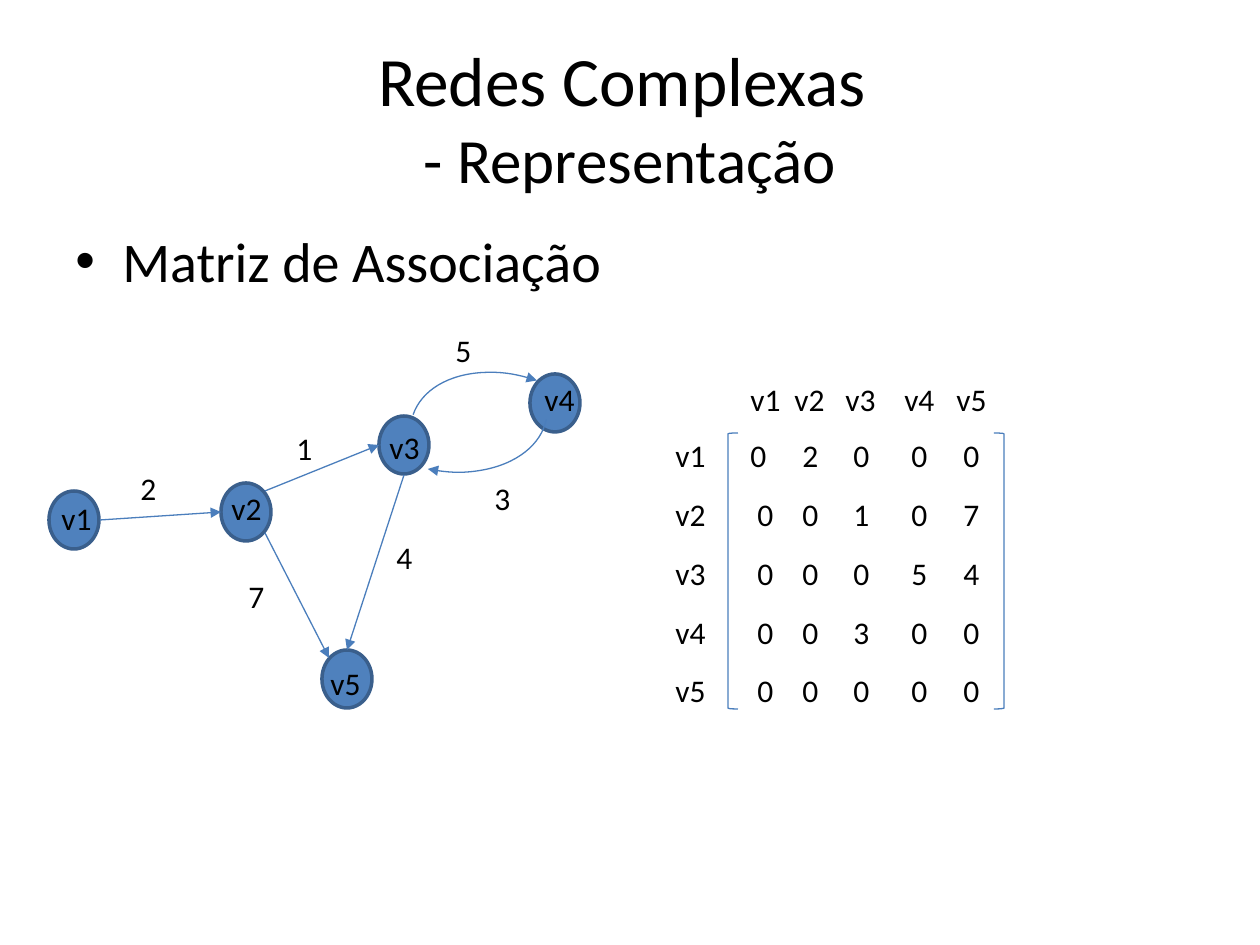
"""Build the slide on the association matrix of a weighted directed graph."""
import lxml.etree
import pptx
import pptx.dml.color
import pptx.enum.shapes
import pptx.enum.text
import pptx.oxml.ns
import pptx.util

PX = 914400 / 126
BLACK = pptx.dml.color.RGBColor(0x00, 0x00, 0x00)
NODE_FILL = pptx.dml.color.RGBColor(0x4F, 0x81, 0xBD)
NODE_EDGE = pptx.dml.color.RGBColor(0x3A, 0x5F, 0x8C)
LINK = pptx.dml.color.RGBColor(0x4B, 0x7E, 0xBC)
KINDS = pptx.enum.shapes.MSO_SHAPE
qn = pptx.oxml.ns.qn

deck = pptx.Presentation()
deck.slide_width = round(1260 * PX)
deck.slide_height = round(945 * PX)
slide = deck.slides.add_slide(deck.slide_layouts[6])


def add_text(box, lines, size=18, wrap=False, after=0, tabs=()):
    frame = slide.shapes.add_textbox(*[round(v * PX) for v in box]).text_frame
    frame.word_wrap = wrap
    frame.text = "\n".join(lines)
    for paragraph in frame.paragraphs:
        paragraph.font.name = "Calibri"
        paragraph.font.size = pptx.util.Pt(size)
        paragraph.font.color.rgb = BLACK
        paragraph.space_after = pptx.util.Pt(after)
        if tabs:
            props = paragraph._p.get_or_add_pPr()
            stops = lxml.etree.Element(qn("a:tabLst"))
            for stop in tabs:
                lxml.etree.SubElement(stops, qn("a:tab"), pos=str(round(stop * PX)), algn="l")
            props.find(qn("a:defRPr")).addprevious(stops)
    return frame


def style_link(link, arrow=True):
    link.line.color.rgb = LINK
    link.line.width = pptx.util.Pt(0.75)
    if arrow:
        lxml.etree.SubElement(link.line._get_or_add_ln(), qn("a:tailEnd"), type="triangle")


topic = add_text((63, 220, 1134, 624), ["Matriz de Associação"], 32, wrap=True).paragraphs[0]
topic.space_before = pptx.util.Pt(3)
topic_props = topic._p.get_or_add_pPr()
topic_props.set("marL", str(round(47 * PX)))
topic_props.set("indent", str(round(-47 * PX)))
bullet_font = lxml.etree.Element(qn("a:buFont"), typeface="Arial")
bullet = lxml.etree.Element(qn("a:buChar"), char="•")
topic_props.find(qn("a:defRPr")).addprevious(bullet_font)
bullet_font.addnext(bullet)

title_frame = add_text((63, 38, 1134, 158), ["Redes Complexas \v- Representação"], 39.6, wrap=True)
title_frame.vertical_anchor = pptx.enum.text.MSO_ANCHOR.MIDDLE
title = title_frame.paragraphs[0]
title.alignment = pptx.enum.text.PP_ALIGN.CENTER
title.runs[1].font.size = pptx.util.Pt(36)

vertices = ["v1", "v2", "v3", "v4", "v5"]
weights = ["0\t2\t0\t0\t0", " 0\t0\t1\t0\t7", " 0\t0\t0\t5\t4", " 0\t0\t3\t0\t0", " 0\t0\t0\t0\t0"]
add_text((738, 430, 278, 348), weights, wrap=True, after=12, tabs=(52, 103, 161, 213))
add_text((663, 430, 55, 348), vertices, after=12)
add_text((738, 374, 266, 50), ["\t".join(vertices)], tabs=(44, 95, 154, 206))

for kind, left in ((KINDS.LEFT_BRACKET, 728), (KINDS.RIGHT_BRACKET, 994)):
    bracket = slide.shapes.add_shape(kind, *[round(v * PX) for v in (left, 433, 10, 276)])
    bracket.shadow.inherit = False
    bracket.fill.background()
    style_link(bracket, arrow=False)

node_spots = [(49, 491), (221, 483), (379, 416), (530, 374), (322, 650)]
for left, top in node_spots:
    node = slide.shapes.add_shape(KINDS.OVAL, *[round(v * PX) for v in (left, top, 50, 58)])
    node.shadow.inherit = False
    node.fill.solid()
    node.fill.fore_color.rgb = NODE_FILL
    node.line.color.rgb = NODE_EDGE
    node.line.width = pptx.util.Pt(2)

straight_links = [
    (265, 491, 379, 445),
    (265, 533, 329, 658),
    (404, 475, 347, 650),
    (100, 520, 221, 512),
]
for ends in straight_links:
    link = slide.shapes.add_connector(
        pptx.enum.shapes.MSO_CONNECTOR.STRAIGHT, *[round(v * PX) for v in ends]
    )
    style_link(link)
    lxml.etree.SubElement(link._element.spPr, qn("a:effectLst"))

label_spots = [(49, 493), (219, 483), (377, 422), (532, 374), (318, 658)]
for vertex, (left, top) in zip(vertices, label_spots):
    add_text((left, top, 55, 50), [vertex])

for left, top, angle in ((441, 343, 288.9), (370, 292, 101.7)):
    curve = slide.shapes.add_shape(KINDS.ARC, *[round(v * PX) for v in (left, top, 145, 212)])
    curve.rotation = angle
    curve.shadow.inherit = False
    curve.fill.background()
    style_link(curve)

link_weights = [
    ("2", 128, 463),
    ("1", 284, 423),
    ("7", 236, 571),
    ("4", 384, 532),
    ("5", 443, 325),
    ("3", 482, 473),
]
for weight, left, top in link_weights:
    add_text((left, top, 42, 50), [weight])

deck.save("out.pptx")
